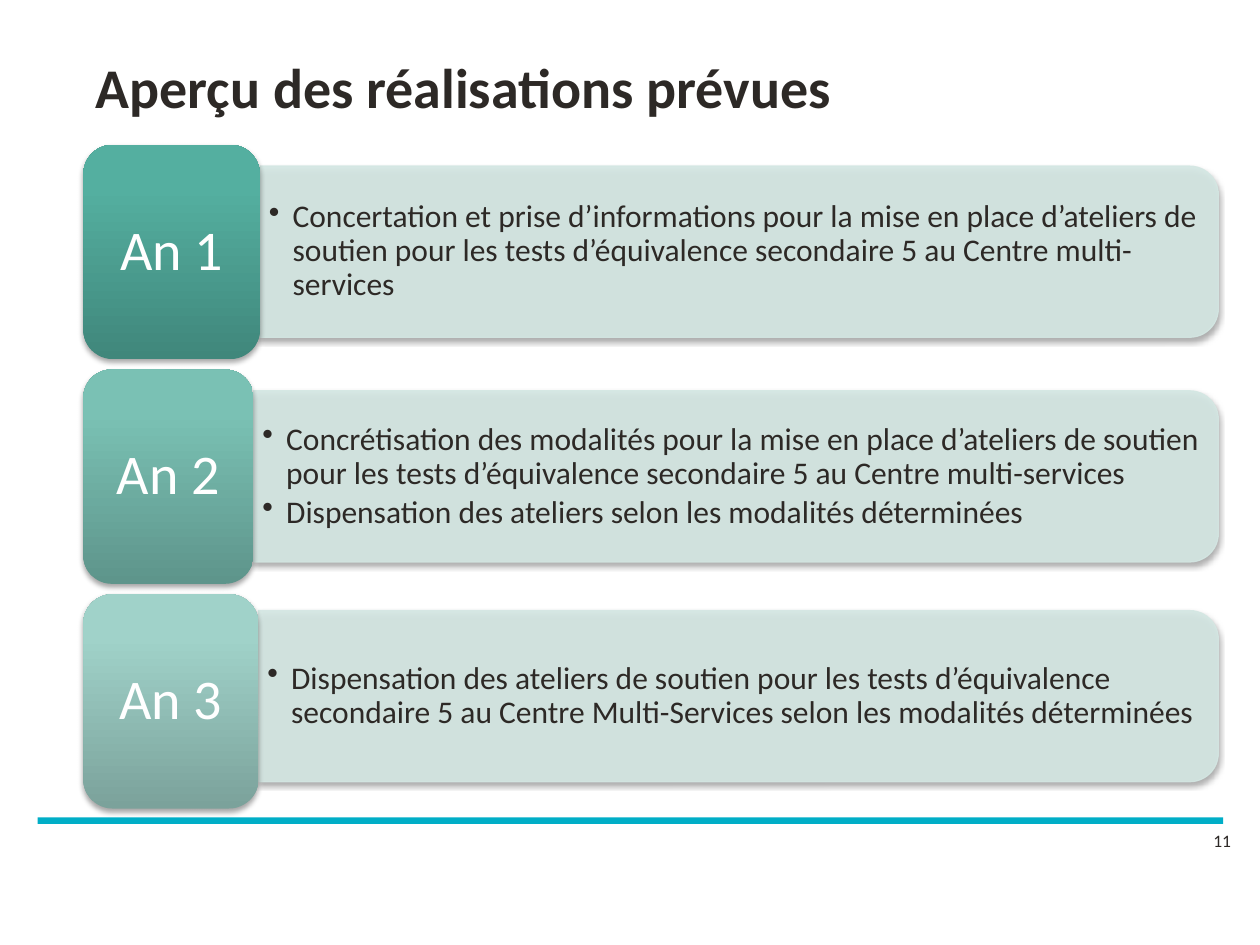
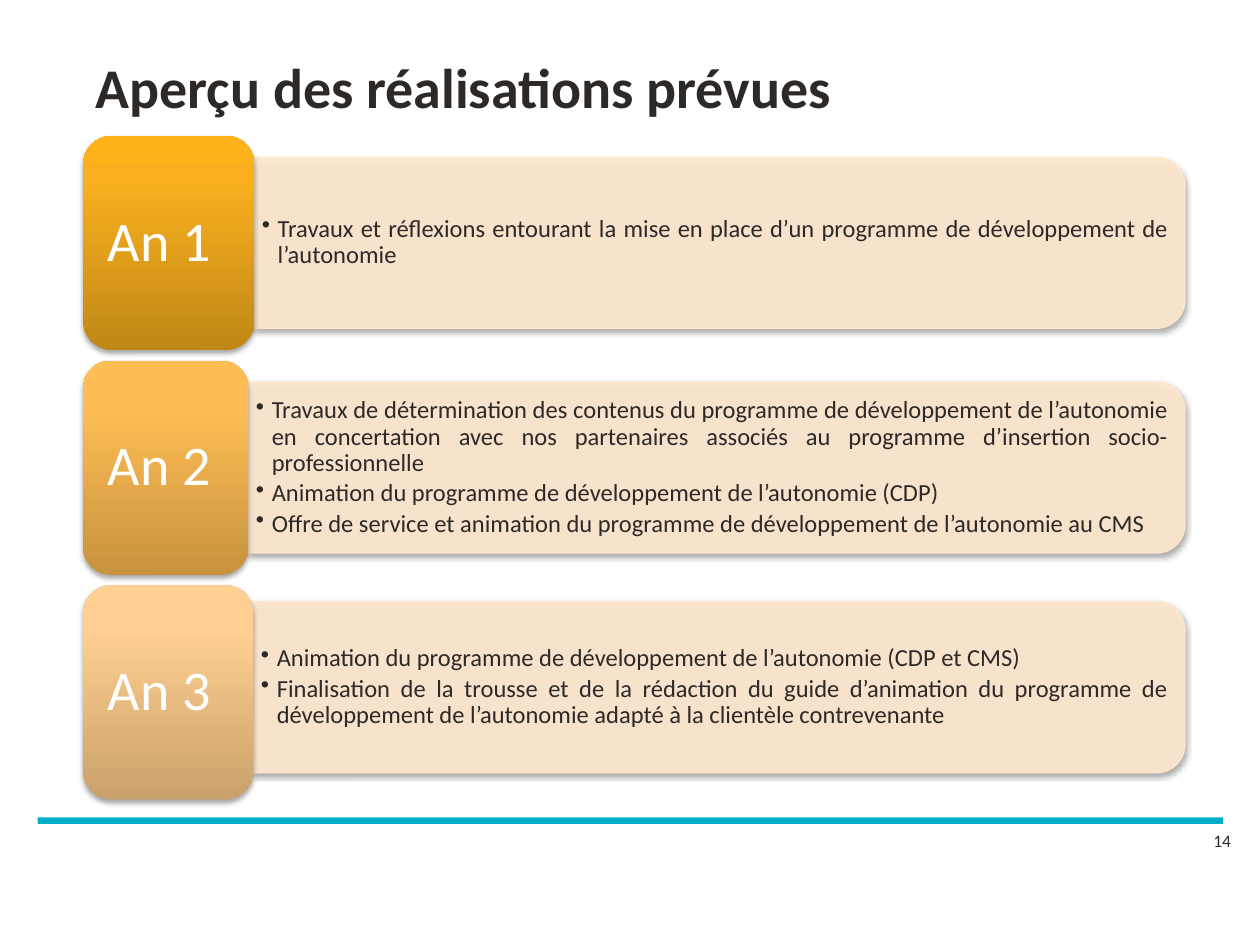
"""Build two slides that outline the planned achievements of years 1 to 3."""
import copy

import pptx
import pptx.dml.color
import pptx.enum.shapes
import pptx.enum.text
import pptx.oxml
import pptx.oxml.ns
import pptx.util

Cm = pptx.util.Cm
Pt = pptx.util.Pt
qn = pptx.oxml.ns.qn
SHAPES = pptx.enum.shapes.MSO_SHAPE
ALIGN = pptx.enum.text.PP_ALIGN
ANCHOR = pptx.enum.text.MSO_ANCHOR

COLORS = {
    "text": "2D2926",
    "white": "FFFFFF",
    "rule": "00AEC7",
    "black": "000000",
    "green_panel": "D4E7E3",
    "orange_panel": "FFE8CF",
}
TITLE = "Aperçu des réalisations prévues"
MARGIN_LEFT = 1.68
TILE_HEIGHT = 4.32
ROW_PITCH = 4.53
PANEL_HEIGHT = 3.45
PANEL_OFFSETS = (0.43, 0.43, 0.33)
PANEL_INSET = 0.18

YEAR_SLIDES = [
    {
        "number": 11, "top": 2.92, "panel_right": 24.56, "panel_color": "green_panel",
        "size": 18, "hanging": 0.48, "insets": (0.18, 0.1),
        "align": ALIGN.LEFT, "label_align": ALIGN.CENTER,
        "rows": [
            (3.56, ("40877B", "54AFA0", "52B2A2"), [
                "Concertation et prise d’informations pour la mise en place d’ateliers de soutien "
                "pour les tests d’équivalence secondaire 5 au Centre multi-services"]),
            (3.43, ("5E958B", "7AC1B4", "79C3B6"), [
                "Concrétisation des modalités pour la mise en place d’ateliers de soutien "
                "pour les tests d’équivalence secondaire 5 au Centre multi-services",
                "Dispensation des ateliers selon les modalités déterminées"]),
            (3.53, ("7BA29B", "A0D2C9", "A0D4CA"), [
                "Dispensation des ateliers de soutien pour les tests d’équivalence "
                "secondaire 5 au Centre Multi-Services selon les modalités déterminées"]),
        ],
    },
    {
        "number": 14, "top": 2.74, "panel_right": 23.89, "panel_color": "orange_panel",
        "size": 14, "hanging": 0.32, "insets": (0.15, 0.08),
        "align": ALIGN.JUSTIFY, "label_align": ALIGN.JUSTIFY,
        "rows": [
            (3.45, ("C08817", "FAB01E", "FFB31A"), [
                "Travaux et réflexions entourant la mise en place d’un programme de "
                "développement de l’autonomie"]),
            (3.33, ("C8933E", "FFBE55", "FFBF56"), [
                "Travaux de détermination des contenus du programme de développement de "
                "l’autonomie en concertation avec nos partenaires associés au programme "
                "d’insertion socio-professionnelle",
                "Animation du programme de développement de l’autonomie (CDP)",
                "Offre de service et animation du programme de développement de l’autonomie au CMS"]),
            (3.43, ("C9A16B", "FFD091", "FFD193"), [
                "Animation du programme de développement de l’autonomie (CDP et CMS)",
                "Finalisation de la trousse et de la rédaction du guide d’animation du programme "
                "de développement de l’autonomie adapté à la clientèle contrevenante"]),
        ],
    },
]


def rgb(value):
    return pptx.dml.color.RGBColor.from_string(value)


class Deck:
    """Hold the shared style and the current slide."""

    font = "Calibri"

    def __init__(self):
        self.presentation = pptx.Presentation()
        self.presentation.slide_width = Cm(25.4)
        self.presentation.slide_height = Cm(19.05)
        self.slide = None

    def new_slide(self, title, number):
        self.slide = self.presentation.slides.add_slide(self.presentation.slide_layouts[6])
        rule = self.shape(SHAPES.RECTANGLE, 0.76, 16.48, 23.9, 0.13)
        rule.fill.solid()
        rule.fill.fore_color.rgb = rgb(COLORS["rule"])
        self.text_box(24.21, 16.61, 1.19, 1.02, [str(number)], 10, anchor=ANCHOR.TOP)
        self.text_box(MARGIN_LEFT, 0.76, 22.22, 1.96, [title], 32, bold=True)

    def shape(self, kind, left, top, width, height):
        shape = self.slide.shapes.add_shape(kind, Cm(left), Cm(top), Cm(width), Cm(height))
        shape.shadow.inherit = False
        shape.line.fill.background()
        return shape

    def cast_shadow(self, shape):
        effects = shape._element.spPr.find(qn("a:effectLst"))
        shadow = pptx.oxml.parse_xml(
            '<a:outerShdw xmlns:a="http://schemas.openxmlformats.org/drawingml/2006/main" '
            f'blurRad="{Pt(3.1)}" dist="{Pt(1.8)}" dir="5400000" rotWithShape="0">'
            f'<a:srgbClr val="{COLORS["black"]}"><a:alpha val="35000"/></a:srgbClr></a:outerShdw>')
        effects.append(shadow)

    def set_text(self, shape, lines, size, color="text", bold=False, anchor=ANCHOR.MIDDLE,
                 align=ALIGN.LEFT, insets=(0.25, 0.13), hanging=0, spacing=None, gap=0):
        frame = shape.text_frame
        frame.text = "\n".join(lines)
        frame.word_wrap = True
        frame.vertical_anchor = anchor
        frame.margin_left = frame.margin_right = Cm(insets[0])
        frame.margin_top = frame.margin_bottom = Cm(insets[1])
        for paragraph in frame.paragraphs:
            if hanging:
                self.bullet(paragraph, hanging)
            paragraph.alignment = align
            paragraph.line_spacing = spacing
            paragraph.space_after = Pt(size * gap)
            for run in paragraph.runs:
                run.font.name = self.font
                run.font.size = Pt(size)
                run.font.bold = bold
                run.font.color.rgb = rgb(COLORS[color])

    def bullet(self, paragraph, hanging):
        properties = paragraph._p.get_or_add_pPr()
        properties.set("marL", str(Cm(hanging)))
        properties.set("indent", str(-Cm(hanging)))
        properties.append(pptx.oxml.parse_xml(
            '<a:buChar xmlns:a="http://schemas.openxmlformats.org/drawingml/2006/main" char="•"/>'))

    def text_box(self, left, top, width, height, lines, size, **style):
        box = self.slide.shapes.add_textbox(Cm(left), Cm(top), Cm(width), Cm(height))
        self.set_text(box, lines, size, **style)

    def panel(self, left, top, right, color):
        length = right - left
        shift = (length - PANEL_HEIGHT) / 2
        panel = self.shape(SHAPES.ROUND_2_SAME_RECTANGLE, left + shift, top - shift,
                           PANEL_HEIGHT, length)
        panel.rotation = 90
        panel.line.width = Pt(0.75)
        for fill in (panel.fill, panel.line.fill):
            fill.solid()
            fill.fore_color.rgb = rgb(COLORS[color])
        for paint in panel._element.spPr.iter(qn("a:srgbClr")):
            paint.append(paint.makeelement(qn("a:alpha"), {"val": "90000"}))
        self.cast_shadow(panel)

    def year_tile(self, top, width, label, stops, align):
        tile = self.shape(SHAPES.ROUNDED_RECTANGLE, MARGIN_LEFT, top, width, TILE_HEIGHT)
        tile.fill.gradient()
        tile.fill.gradient_angle = 90
        stop_list = tile._element.spPr.find(".//" + qn("a:gsLst"))
        stop_list.append(copy.deepcopy(stop_list[-1]))
        for stop, position, color in zip(tile.fill.gradient_stops, (0, 0.8, 1), stops):
            stop.position = position
            stop.color.rgb = rgb(color)
        self.cast_shadow(tile)
        self.set_text(tile, [label], 32, color="white", align=align, insets=(0.33, 0.18),
                      spacing=0.9, gap=0.35)

    def year_rows(self, content):
        for index, (tile_width, stops, lines) in enumerate(content["rows"]):
            top = content["top"] + index * ROW_PITCH
            left = MARGIN_LEFT + tile_width
            right = content["panel_right"]
            panel_top = top + PANEL_OFFSETS[index]
            self.panel(left, panel_top, right, content["panel_color"])
            self.text_box(left, panel_top + PANEL_INSET, right - left - PANEL_INSET,
                          PANEL_HEIGHT - 2 * PANEL_INSET, lines, content["size"],
                          align=content["align"], insets=content["insets"],
                          hanging=content["hanging"], spacing=0.9, gap=0.15)
            self.year_tile(top, tile_width, f"An {index + 1}", stops, content["label_align"])


def main():
    deck = Deck()
    for content in YEAR_SLIDES:
        deck.new_slide(TITLE, content["number"])
        deck.year_rows(content)
    deck.presentation.save("out.pptx")


if __name__ == "__main__":
    main()
